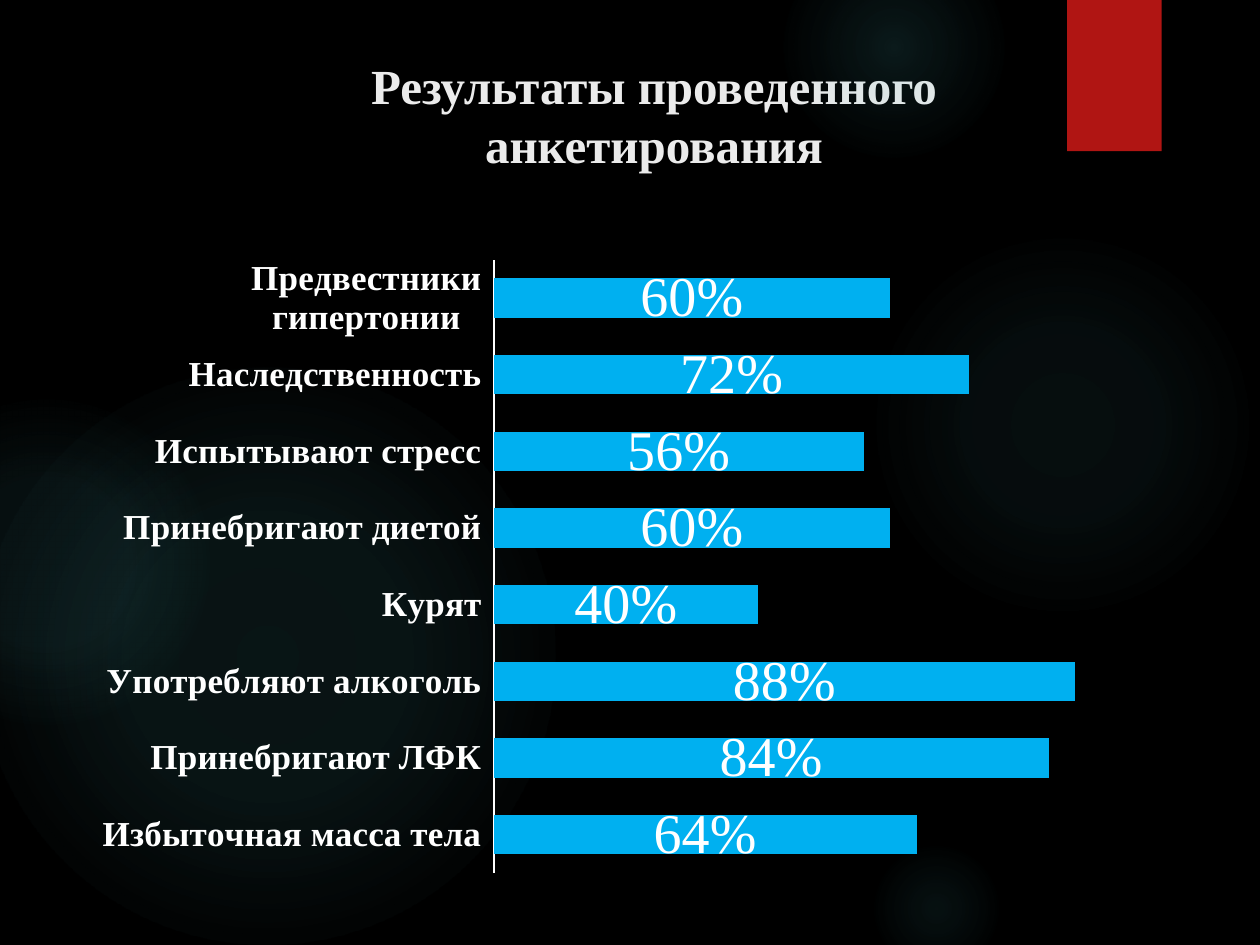
from lxml import etree
from pptx import Presentation
from pptx.chart.data import CategoryChartData
from pptx.dml.color import RGBColor
from pptx.enum.chart import XL_CHART_TYPE, XL_LABEL_POSITION, XL_TICK_LABEL_POSITION, XL_TICK_MARK
from pptx.enum.shapes import MSO_SHAPE
from pptx.enum.text import MSO_ANCHOR, MSO_AUTO_SIZE, PP_ALIGN
from pptx.oxml import parse_xml
from pptx.oxml.ns import nsdecls, qn
from pptx.util import Inches, Pt

BAR = XL_CHART_TYPE.BAR_STACKED
MIDDLE = XL_LABEL_POSITION.CENTER
LOW = XL_TICK_LABEL_POSITION.LOW
NO_TICK = XL_TICK_MARK.NONE
OVAL, RECT = MSO_SHAPE.OVAL, MSO_SHAPE.RECTANGLE
SERIF, SANS = "Times New Roman", "TeX Gyre Adventor"
GLOW = "50B9C1"

# left, top, diameter, then (position, opacity) stops in percent
GLOWS = [
    (6.89, 1.83, 3.08, [(0, 7), (36, 6), (69, 0)]),
    (6.22, -0.5, 1.75, [(0, 14), (36, 7), (73, 0)]),
    (6.89, 6.67, 1.08, [(0, 9), (36, 5), (66, 0)]),
    (-0.17, 2.92, 4.58, [(0, 11), (36, 10), (75, 0)]),
    (-0.92, 3.17, 2.58, [(0, 8), (36, 8), (72, 0)]),
]
ANSWERS = {
    "Избыточная масса тела": 0.64,
    "Принебригают ЛФК": 0.84,
    "Употребляют алкоголь": 0.88,
    "Курят": 0.4,
    "Принебригают диетой": 0.6,
    "Испытывают стресс": 0.56,
    "Наследственность": 0.72,
    "Предвестники гипертонии": 0.6,
}


def paint(target, color):
    """Give a fill a solid colour."""
    target.solid()
    target.fore_color.rgb = RGBColor.from_string(color)


def style(font, size, color, name=SERIF, bold=False):
    font.size, font.name, font.bold = Pt(size), name, bold
    font.color.rgb = RGBColor.from_string(color)


def add_plain(slide, kind, box):
    """Add a shape without line or shadow."""
    shape = slide.shapes.add_shape(kind, *map(Inches, box))
    shape.shadow.inherit = False
    shape.line.fill.background()
    return shape


def add_glow(slide, box, stops):
    """Add a circle that fades out from its centre."""
    shape = add_plain(slide, OVAL, box)
    marks = "".join(
        f'<a:gs pos="{pos * 1000}"><a:srgbClr val="{GLOW}">'
        f'<a:alpha val="{alpha * 1000}"/></a:srgbClr></a:gs>'
        for pos, alpha in stops)
    fade = parse_xml(
        f'<a:gradFill {nsdecls("a")} rotWithShape="1"><a:gsLst>{marks}</a:gsLst>'
        '<a:path path="circle"><a:fillToRect l="50000" t="50000" r="50000" b="50000"/>'
        '</a:path></a:gradFill>')
    shape._element.spPr.find(qn("a:prstGeom")).addnext(fade)


def add_decor(slide):
    for left, top, size, stops in GLOWS:
        add_glow(slide, (left, top, size, size), stops)
    tab = add_plain(slide, RECT, (8.47, 0, 0.75, 1.2))
    paint(tab.fill, "B01513")
    effects = tab._element.spPr.find(qn("a:effectLst"))
    effects.append(parse_xml(
        f'<a:outerShdw {nsdecls("a")} blurRad="38100" dist="25400" dir="5400000">'
        '<a:srgbClr val="000000"><a:alpha val="45000"/></a:srgbClr></a:outerShdw>'))


def set_title(slide, box):
    title = slide.shapes.title
    title.left, title.top, title.width, title.height = map(Inches, box)
    frame = title.text_frame
    frame.text = "Результаты проведенного анкетирования"
    frame.word_wrap = True
    frame.auto_size = MSO_AUTO_SIZE.NONE
    frame.vertical_anchor = MSO_ANCHOR.MIDDLE
    para = frame.paragraphs[0]
    para.alignment = PP_ALIGN.CENTER
    style(para.runs[0].font, 28, "EBEBEB", bold=True)


def set_plot(chart, x, y, w, h):
    """Fix the inner plot area, in shares of the chart."""
    area = chart._chartSpace.chart.plotArea
    for old in area.findall(qn("c:layout")):
        area.remove(old)
    layout = etree.Element(qn("c:layout"))
    manual = etree.SubElement(layout, qn("c:manualLayout"))
    values = {"layoutTarget": "inner", "xMode": "edge", "yMode": "edge",
              "x": x, "y": y, "w": w, "h": h}
    for tag, value in values.items():
        etree.SubElement(manual, qn(f"c:{tag}")).set("val", str(value))
    area.insert(0, layout)


def add_bars(slide, box):
    data = CategoryChartData(number_format="0%")
    data.categories = list(ANSWERS)
    data.add_series("Series 1", list(ANSWERS.values()))
    chart = slide.shapes.add_chart(BAR, *map(Inches, box), data).chart
    chart.has_title = chart.has_legend = False
    style(chart.font, 10, "FFFFFF", SANS)
    set_plot(chart, 0.375, 0.02, 0.61, 0.96)

    names = chart.category_axis
    names.major_tick_mark = names.minor_tick_mark = NO_TICK
    names.tick_label_position = LOW
    names.format.line.width = Pt(0.75)
    paint(names.format.line.fill, "FFFFFF")
    style(names.tick_labels.font, 20, "FFFFFF", bold=True)

    scale = chart.value_axis
    scale.minimum_scale, scale.maximum_scale = 0, 1
    scale.has_major_gridlines = False
    scale.visible = False

    plot = chart.plots[0]
    plot.gap_width, plot.overlap, plot.vary_by_categories = 95, 100, False
    paint(plot.series[0].format.fill, "00B0F0")
    labels = plot.series[0].data_labels
    labels.show_value = True
    labels.number_format, labels.number_format_is_linked = "0%", False
    labels.position = MIDDLE
    style(labels.font, 32, "FFFFFF")


def main():
    deck = Presentation()
    deck.slide_width, deck.slide_height = Inches(10), Inches(7.5)
    slide = deck.slides.add_slide(deck.slide_layouts[5])
    paint(slide.background.fill, "000000")
    add_decor(slide)
    set_title(slide, (1.95, 0.39, 6.48, 1.04))
    add_bars(slide, (0.7, 1.96, 8.59, 5.07))
    deck.save("out.pptx")


if __name__ == "__main__":
    main()
